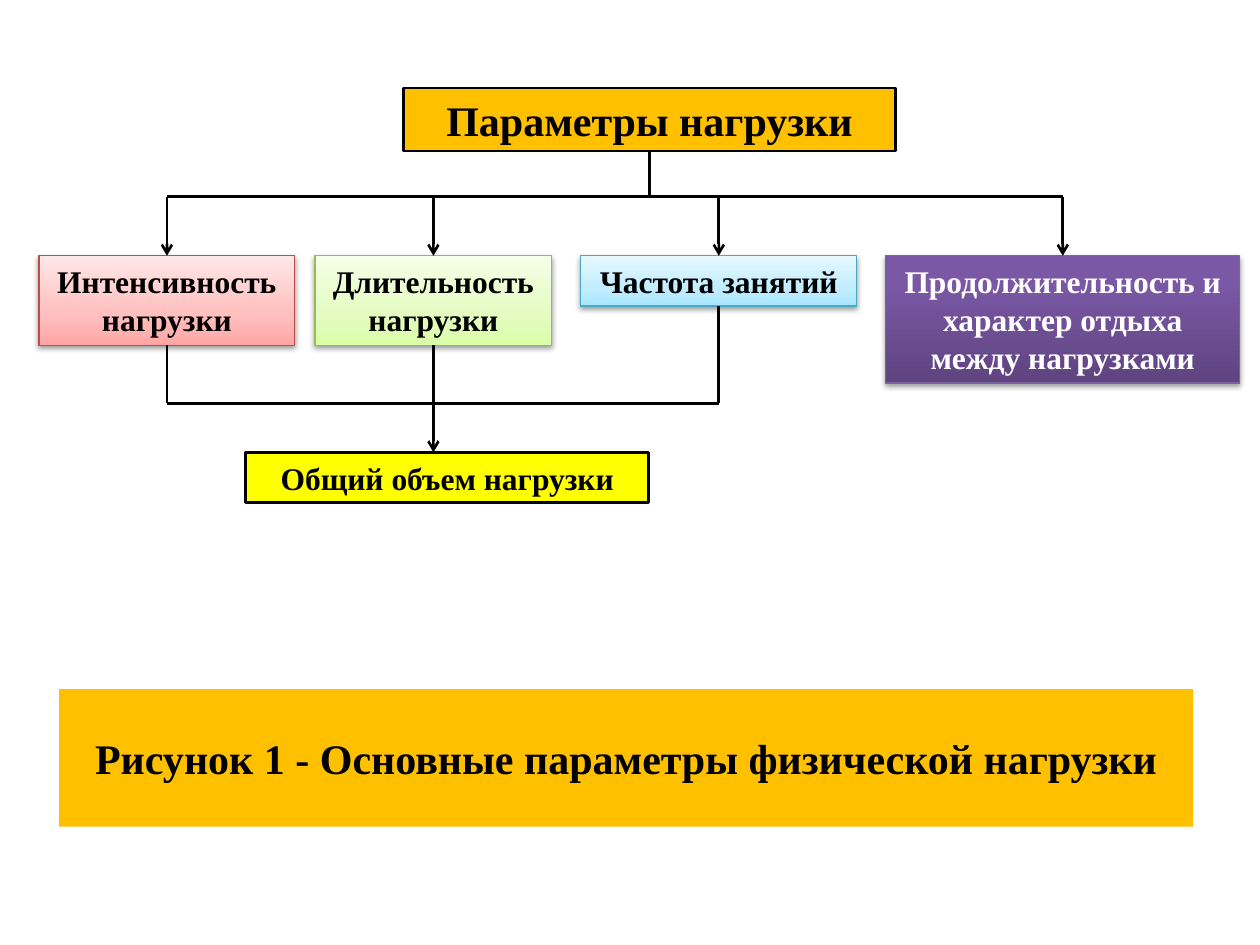
"""Build a slide with a diagram of the parameters of physical load."""
from dataclasses import dataclass

from lxml import etree
from pptx import Presentation
from pptx import util as u
from pptx.dml.color import RGBColor
from pptx.enum import shapes, text
from pptx.oxml.ns import qn


@dataclass(frozen=True)
class Theme:
    """Colours, type sizes and line widths of the slide."""
    font: str = "Times New Roman"
    large: int = 24
    body: int = 18
    black: str = "000000"
    white: str = "FFFFFF"
    amber: str = "FFC000"
    yellow: str = "FFFF00"
    red: tuple = ((0, "FFA6A5"), (35, "FFC0BF"), (100, "FFE7E7"))
    green: tuple = ((0, "DAFDA7"), (35, "E4FCC2"), (100, "F5FFE7"))
    blue: tuple = ((0, "A7E6FF"), (35, "C1EDFF"), (100, "E7F8FF"))
    purple: tuple = ((0, "5F4480"), (80, "7B58A6"), (100, "7C57A8"))
    red_line: str = "BF4C48"
    green_line: str = "98B955"
    blue_line: str = "46AAC5"
    purple_line: str = "7D60A0"
    thick: float = 1.5
    thin: float = 0.75


T = Theme()
BUS_Y, JOIN_Y, ROW_Y, TOTAL_Y = 1.56, 3.2, 2.03, 3.59
PARAMETERS = (
    ("Интенсивность нагрузки", 0.31, 2.03, 0.71, T.red, T.red_line, T.black),
    ("Длительность нагрузки", 2.5, 1.88, 0.71, T.green, T.green_line, T.black),
    ("Частота занятий", 4.61, 2.19, 0.4, T.blue, T.blue_line, T.black),
    ("Продолжительность и характер отдыха между нагрузками",
     7.03, 2.81, 1.01, T.purple, T.purple_line, T.white),
)


def add_xml(parent, tag, **attrs):
    """Append a DrawingML element and return it."""
    return etree.SubElement(parent, qn(tag), attrs)


def set_solid(sp, color):
    """Fill a shape with one colour."""
    sp.fill.solid()
    sp.fill.fore_color.rgb = RGBColor.from_string(color)


def set_gradient(sp, stops):
    """Fill a shape with a gradient that runs from bottom to top."""
    sp.fill.gradient()
    sp.fill.gradient_angle = 90
    gs_list = sp._element.spPr.find(qn("a:gradFill")).find(qn("a:gsLst"))
    for gs in list(gs_list):
        gs_list.remove(gs)
    for pos, color in stops:
        gs = add_xml(gs_list, "a:gs", pos=str(pos * 1000))
        add_xml(gs, "a:srgbClr", val=color)


def set_shadow(sp):
    """Give a shape a soft shadow below it."""
    effects = sp._element.spPr.find(qn("a:effectLst"))
    shadow = add_xml(effects, "a:outerShdw", blurRad=str(u.Pt(3.1)),
                     dist=str(u.Pt(1.6)), dir="5400000", rotWithShape="0")
    color = add_xml(shadow, "a:srgbClr", val=T.black)
    add_xml(color, "a:alpha", val="38000")


def set_text(tf, words, size, color):
    """Write one centred bold paragraph."""
    tf.text = words
    p = tf.paragraphs[0]
    p.alignment = text.PP_ALIGN.CENTER
    font = p.runs[0].font
    font.name, font.size, font.bold = T.font, u.Pt(size), True
    font.color.rgb = RGBColor.from_string(color)


def add_title(s, words):
    """Place the caption in the title placeholder."""
    sp = s.shapes.title
    sp.left, sp.top = u.Inches(0.47), u.Inches(5.47)
    sp.width, sp.height = u.Inches(9), u.Inches(1.09)
    set_solid(sp, T.amber)
    sp.text_frame.vertical_anchor = text.MSO_ANCHOR.MIDDLE
    set_text(sp.text_frame, words, T.large, T.black)


def add_box(s, words, box, line, width, size=T.body, color=T.black):
    """Add an outlined rectangle with text."""
    sp = s.shapes.add_shape(shapes.MSO_SHAPE.RECTANGLE,
                            *(u.Inches(v) for v in box))
    sp.shadow.inherit = False
    sp.line.color.rgb = RGBColor.from_string(line)
    sp.line.width = u.Pt(width)
    tf = sp.text_frame
    tf.word_wrap = True
    tf.auto_size = text.MSO_AUTO_SIZE.SHAPE_TO_FIT_TEXT
    tf.vertical_anchor = text.MSO_ANCHOR.TOP
    set_text(tf, words, size, color)
    return sp


def add_parameter(s, words, left, width, height, stops, line, color):
    """Add one shaded parameter box."""
    sp = add_box(s, words, (left, ROW_Y, width, height), line, T.thin,
                 color=color)
    set_gradient(sp, stops)
    set_shadow(sp)
    return sp


def add_line(s, x1, y1, x2, y2, start=None, end=None, arrow=False):
    """Add a line, joined to the bottom of start and the top of end."""
    c = s.shapes.add_connector(shapes.MSO_CONNECTOR.STRAIGHT, x1, y1, x2, y2)
    if start is not None:
        c.begin_connect(start, 2)
    if end is not None:
        c.end_connect(end, 0)
    c.line.color.rgb = RGBColor.from_string(T.black)
    c.line.width = u.Pt(T.thick)
    if arrow:
        add_xml(c.line._get_or_add_ln(), "a:tailEnd", type="arrow")
    add_xml(c._element.spPr, "a:effectLst")


def center_x(sp):
    """Return the horizontal centre of a shape."""
    return sp.left + sp.width // 2


def add_links(s, root, boxes):
    """Connect the root, the parameters and the total."""
    bus, join, row, total = (u.Inches(y)
                             for y in (BUS_Y, JOIN_Y, ROW_Y, TOTAL_Y))
    xs = [center_x(sp) for sp in boxes]
    x = center_x(root)
    add_line(s, x, root.top + root.height, x, bus, start=root)
    add_line(s, xs[0], bus, xs[-1], bus)
    for x, sp in zip(xs, boxes):
        add_line(s, x, bus, x, row, end=sp, arrow=True)
    add_line(s, xs[0], join, xs[2], join)
    for i, bottom in enumerate((join, total, join)):
        sp = boxes[i]
        add_line(s, xs[i], sp.top + sp.height, xs[i], bottom, start=sp,
                 arrow=bottom == total)


def main():
    """Build and save the slide."""
    prs = Presentation()
    prs.slide_width, prs.slide_height = u.Inches(10), u.Inches(7.5)
    s = prs.slides.add_slide(prs.slide_layouts[5])
    add_title(s, "Рисунок 1 - Основные параметры физической нагрузки")
    root = add_box(s, "Параметры нагрузки", (3.2, 0.7, 3.91, 0.5),
                   T.black, T.thick, T.large)
    set_solid(root, T.amber)
    boxes = [add_parameter(s, *parameter) for parameter in PARAMETERS]
    total = add_box(s, "Общий объем нагрузки", (1.95, TOTAL_Y, 3.2, 0.4),
                    T.black, T.thick)
    set_solid(total, T.yellow)
    add_links(s, root, boxes)
    prs.save("out.pptx")


if __name__ == "__main__":
    main()
